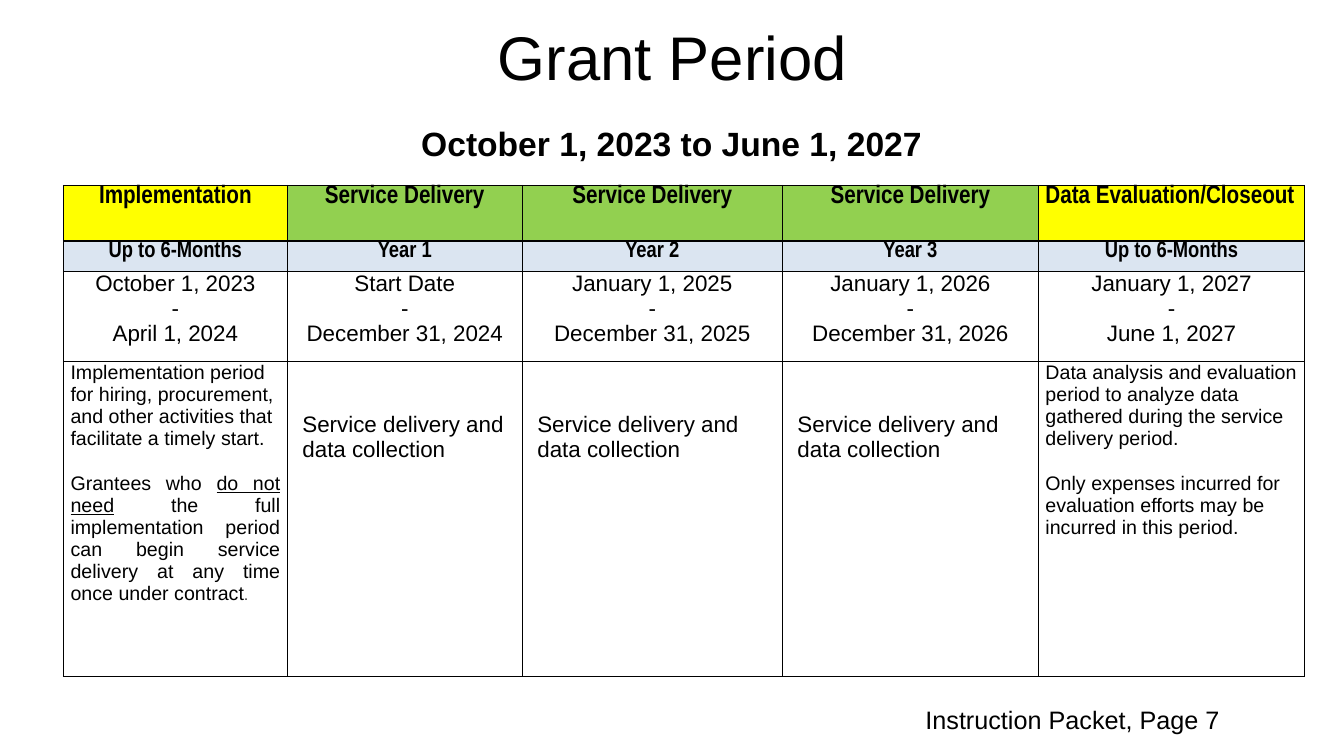
from dataclasses import dataclass

from lxml import etree
from pptx import Presentation
from pptx import util as u
from pptx.dml.color import RGBColor
from pptx.enum import text
from pptx.oxml.ns import qn

PX = 9144  # 100 px to the inch


@dataclass(frozen=True)
class Theme:
    font: str = "Arial"
    narrow: str = "Arial Narrow"
    ink: str = "000000"
    yellow: str = "FFFF00"
    green: str = "92D050"
    blue: str = "DBE5F1"
    title: int = 44
    subtitle: int = 24
    heading: int = 18
    cell: int = 16
    detail: int = 14
    full_stop: int = 11


THEME = Theme()
LEFT, CENTER, JUSTIFY = (text.PP_ALIGN.LEFT, text.PP_ALIGN.CENTER,
                         text.PP_ALIGN.JUSTIFY)

# Table content, one entry per grant phase
COLUMN_WIDTHS = (222, 233, 258, 254, 264)
ROW_HEIGHTS = (55, 30, 90, 312)
PHASES = ("Implementation", "Service Delivery", "Service Delivery",
          "Service Delivery", "Data Evaluation/Closeout")
PHASE_FILLS = (THEME.yellow, THEME.green, THEME.green, THEME.green, THEME.yellow)
DURATIONS = ("Up to 6-Months", "Year 1", "Year 2", "Year 3", "Up to 6-Months")
DATES = (("October 1, 2023", "April 1, 2024"),
         ("Start Date", "December 31, 2024"),
         ("January 1, 2025", "December 31, 2025"),
         ("January 1, 2026", "December 31, 2026"),
         ("January 1, 2027", "June 1, 2027"))
START_NOTES = ("Implementation period for hiring, procurement,",
               "and other activities that facilitate a timely start.")
EARLY_START = ("Grantees who ", "do not need",
               " the full implementation period can begin service delivery"
               " at any time once under contract", ".")
SERVICE_NOTE = "Service delivery and data collection"
CLOSEOUT_NOTES = ("Data analysis and evaluation period to analyze data gathered"
                  " during the service delivery period.",
                  "Only expenses incurred for evaluation efforts may be"
                  " incurred in this period.")


def px(length):
    return u.Emu(length * PX)


def style_font(font, size, bold=False, name=THEME.font):
    font.name, font.size, font.bold = name, u.Pt(size), bold
    font.color.rgb = RGBColor.from_string(THEME.ink)


def style_text(frame, size, align=LEFT, **font_options):
    for paragraph in frame.paragraphs:
        paragraph.alignment = align
        for run in paragraph.runs:
            style_font(run.font, size, **font_options)


def place(shape, left, top, width, height):
    shape.left, shape.top = px(left), px(top)
    shape.width, shape.height = px(width), px(height)


def add_title(slide, words):
    title = slide.shapes.title
    place(title, 40, 16, 1254, 77)
    frame = title.text_frame
    frame.text = words
    frame.vertical_anchor = text.MSO_ANCHOR.BOTTOM
    frame.margin_left = frame.margin_right = 0
    frame.margin_top = frame.margin_bottom = 0
    frame.paragraphs[0].line_spacing = 0.9
    style_text(frame, THEME.title, CENTER)


def add_label(slide, words, box, size, **options):
    label = slide.shapes.add_textbox(*map(px, box))
    frame = label.text_frame
    frame.word_wrap = True
    frame.text = words
    style_text(frame, size, **options)
    return frame


def add_borders(cell):
    properties = cell._tc.get_or_add_tcPr()
    for index, side in enumerate(("a:lnL", "a:lnR", "a:lnT", "a:lnB")):
        line = etree.Element(qn(side), w=str(u.Pt(1)))
        fill = etree.SubElement(line, qn("a:solidFill"))
        etree.SubElement(fill, qn("a:srgbClr"), val=THEME.ink)
        properties.insert(index, line)


def format_cell(cell, fill=None):
    cell.margin_left = cell.margin_right = px(7)
    cell.margin_top = cell.margin_bottom = 0
    if fill:
        cell.fill.solid()
        cell.fill.fore_color.rgb = RGBColor.from_string(fill)
    else:
        cell.fill.background()
    add_borders(cell)


def write_cell(cell, lines, size, align=LEFT, **font_options):
    cell.text_frame.text = "\n".join(lines)
    style_text(cell.text_frame, size, align, **font_options)


def write_implementation(cell):
    write_cell(cell, START_NOTES, THEME.detail)
    paragraph = cell.text_frame.add_paragraph()
    paragraph.alignment = JUSTIFY
    paragraph.space_before = u.Pt(16)
    for words in EARLY_START:
        run = paragraph.add_run()
        run.text = words
        style_font(run.font, THEME.detail)
    paragraph.runs[1].font.underline = True
    style_font(paragraph.runs[-1].font, THEME.full_stop, name=THEME.narrow)


def write_service(cell):
    write_cell(cell, [SERVICE_NOTE], THEME.cell)
    cell.margin_left, cell.margin_top = px(15), px(50)


def write_closeout(cell):
    write_cell(cell, CLOSEOUT_NOTES, THEME.detail)
    cell.text_frame.paragraphs[1].space_before = u.Pt(16)


def add_schedule(slide):
    table = slide.shapes.add_table(
        len(ROW_HEIGHTS), len(COLUMN_WIDTHS), px(63), px(184),
        px(sum(COLUMN_WIDTHS)), px(sum(ROW_HEIGHTS))).table
    table.first_row = table.horz_banding = False
    for row, height in zip(table.rows, ROW_HEIGHTS):
        row.height = px(height)

    writers = (write_implementation, write_service, write_service,
               write_service, write_closeout)
    for index, width in enumerate(COLUMN_WIDTHS):
        table.columns[index].width = px(width)
        phase, duration, dates, notes = (
            table.cell(row, index) for row in range(len(ROW_HEIGHTS)))
        format_cell(phase, PHASE_FILLS[index])
        format_cell(duration, THEME.blue)
        format_cell(dates)
        format_cell(notes)
        phase_align = LEFT if index == len(PHASES) - 1 else CENTER
        write_cell(phase, [PHASES[index]], THEME.heading, phase_align,
                   bold=True, name=THEME.narrow)
        write_cell(duration, [DURATIONS[index]], THEME.cell, CENTER,
                   bold=True, name=THEME.narrow)
        start, end = DATES[index]
        write_cell(dates, [start, "-", end], THEME.cell, CENTER)
        writers[index](notes)


def main():
    presentation = Presentation()
    presentation.slide_width, presentation.slide_height = px(1333), px(750)
    slide = presentation.slides.add_slide(presentation.slide_layouts[5])

    # Heading and grant dates
    add_title(slide, "Grant Period")
    subtitle = add_label(slide, "October 1, 2023 to June 1, 2027",
                         (82, 122, 1168, 63), THEME.subtitle,
                         align=CENTER, bold=True)
    subtitle.paragraphs[0].line_spacing = 0.9

    # Phases of the grant
    add_schedule(slide)

    # Page reference
    add_label(slide, "Instruction Packet, Page 7", (908, 694, 385, 40),
              THEME.heading)
    presentation.save("out.pptx")


if __name__ == "__main__":
    main()
